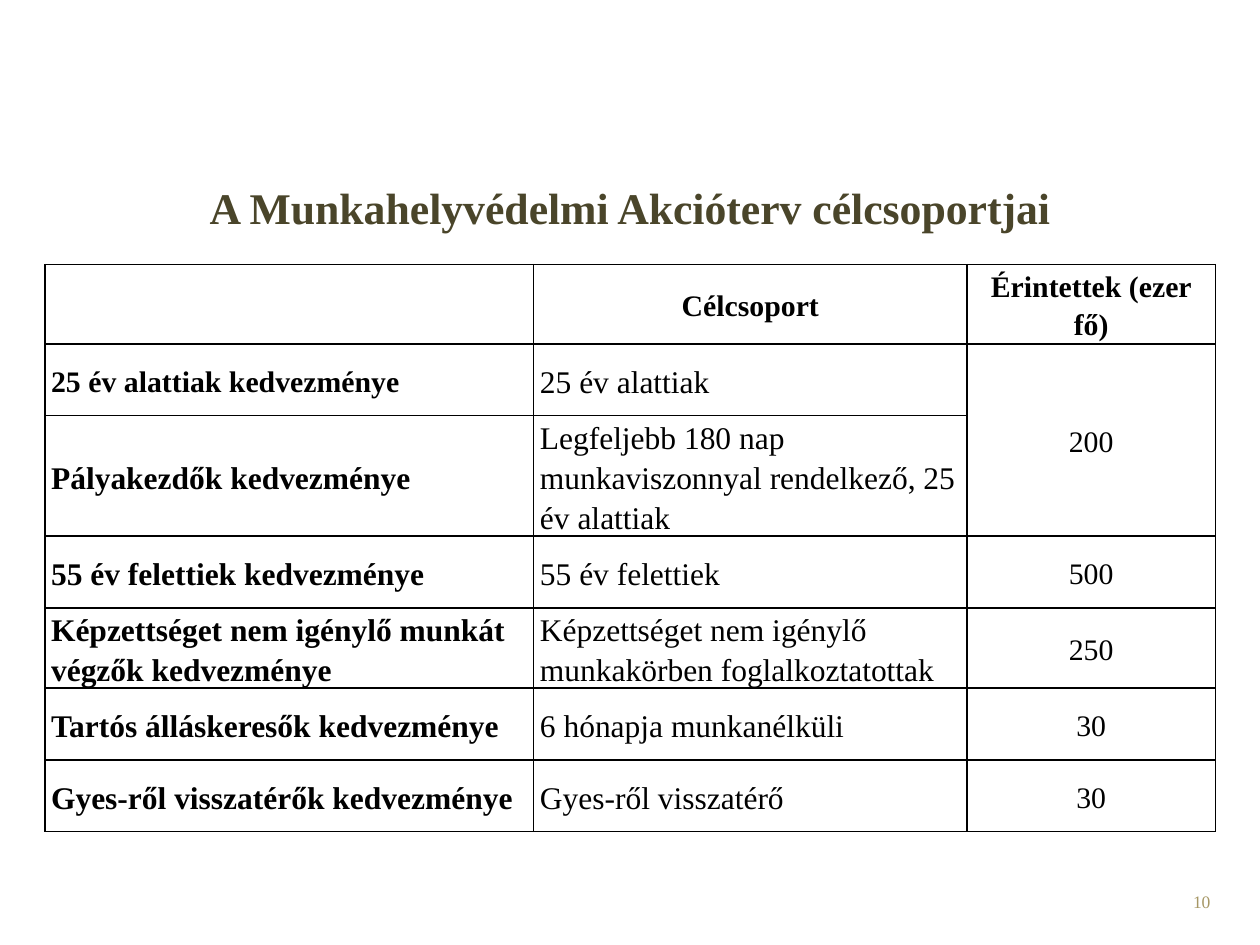
from dataclasses import dataclass

from lxml import etree
from pptx import Presentation
from pptx import util as u
from pptx.dml.color import RGBColor
from pptx.enum import text as t
from pptx.oxml import ns

Pt = u.Pt
FONT = "Times New Roman"
HUES = {"title": "4A452A", "page": "A69765", "ink": "000000"}
LEFT, MID, RIGHT = t.PP_ALIGN.LEFT, t.PP_ALIGN.CENTER, t.PP_ALIGN.RIGHT


@dataclass
class Style:
    size: float
    hue: str = "ink"
    bold: bool = False
    align: t.PP_ALIGN = LEFT


@dataclass
class Label:
    words: str
    box: tuple[float, float, float, float]
    style: Style
    anchor: t.MSO_ANCHOR


@dataclass
class Group:
    name: str
    target: str
    count: str
    size: float = 18


LABELS = [
    Label("10", (531, 505.44, 167.76, 28.8),
          Style(10, "page", align=RIGHT), t.MSO_ANCHOR.TOP),
    Label("A Munkahelyvédelmi Akcióterv célcsoportjai", (54, 98.5, 612, 39.6),
          Style(25, "title", True, MID), t.MSO_ANCHOR.MIDDLE),
]
HEADS = ["", "Célcsoport", "Érintettek (ezer fő)"]
GROUPS = [
    Group("25 év alattiak kedvezménye", "25 év alattiak", "200", 17),
    Group("Pályakezdők kedvezménye",
          "Legfeljebb 180 nap munkaviszonnyal rendelkező, 25 év alattiak", ""),
    Group("55 év felettiek kedvezménye", "55 év felettiek", "500"),
    Group("Képzettséget nem igénylő munkát végzők kedvezménye",
          "Képzettséget nem igénylő munkakörben foglalkoztatottak", "250"),
    Group("Tartós álláskeresők kedvezménye", "6 hónapja munkanélküli", "30"),
    Group("Gyes-ről visszatérők kedvezménye", "Gyes-ről visszatérő", "30"),
]
WIDTHS = [279.36, 247.68, 141.84]
HEAD, ROW = 45.36, 41.04
PITCH = 1.27


def write(frame, words: str, style: Style) -> None:
    frame.text = words
    para = frame.paragraphs[0]
    para.alignment = style.align
    for run in para.runs:
        run.font.name = FONT
        run.font.size = Pt(style.size)
        run.font.bold = style.bold
        run.font.color.rgb = RGBColor.from_string(HUES[style.hue])


def label(slide, item: Label) -> None:
    frame = slide.shapes.add_textbox(*map(Pt, item.box)).text_frame
    frame.word_wrap = True
    frame.vertical_anchor = item.anchor
    write(frame, item.words, item.style)


def edge(cell) -> None:
    props = cell._tc.get_or_add_tcPr()
    for side in ("lnL", "lnR", "lnT", "lnB"):
        line = etree.SubElement(props, ns.qn(f"a:{side}"), w=str(Pt(1)))
        fill = etree.SubElement(line, ns.qn("a:solidFill"))
        etree.SubElement(fill, ns.qn("a:srgbClr"), val=HUES["ink"])


def fill_cell(cell, words: str, style: Style) -> None:
    edge(cell)
    cell.fill.background()
    cell.vertical_anchor = t.MSO_ANCHOR.MIDDLE
    cell.margin_left = cell.margin_right = Pt(3.6)
    cell.margin_top = cell.margin_bottom = Pt(0)
    write(cell.text_frame, words, style)
    cell.text_frame.paragraphs[0].line_spacing = Pt(round(style.size * PITCH, 1))


def grid(slide) -> None:
    tall = HEAD + ROW * len(GROUPS)
    table = slide.shapes.add_table(
        len(GROUPS) + 1, len(WIDTHS),
        Pt(25.6), Pt(151.2), Pt(sum(WIDTHS)), Pt(tall)).table
    table.first_row = table.horz_banding = False
    for col, width in zip(table.columns, WIDTHS):
        col.width = Pt(width)
    for i, row in enumerate(table.rows):
        row.height = Pt(ROW if i else HEAD)
    for j, head in enumerate(HEADS):
        fill_cell(table.cell(0, j), head, Style(17, bold=True, align=MID))
    for i, group in enumerate(GROUPS, 1):
        fill_cell(table.cell(i, 0), group.name, Style(group.size, bold=True))
        fill_cell(table.cell(i, 1), group.target, Style(18))
        fill_cell(table.cell(i, 2), group.count, Style(17, align=MID))
    table.cell(1, 2).merge(table.cell(2, 2))


def main() -> None:
    deck = Presentation()
    deck.slide_width, deck.slide_height = Pt(720), Pt(540)
    slide = deck.slides.add_slide(deck.slide_layouts[6])
    for item in LABELS:
        label(slide, item)
    grid(slide)
    deck.save("out.pptx")


if __name__ == "__main__":
    main()
